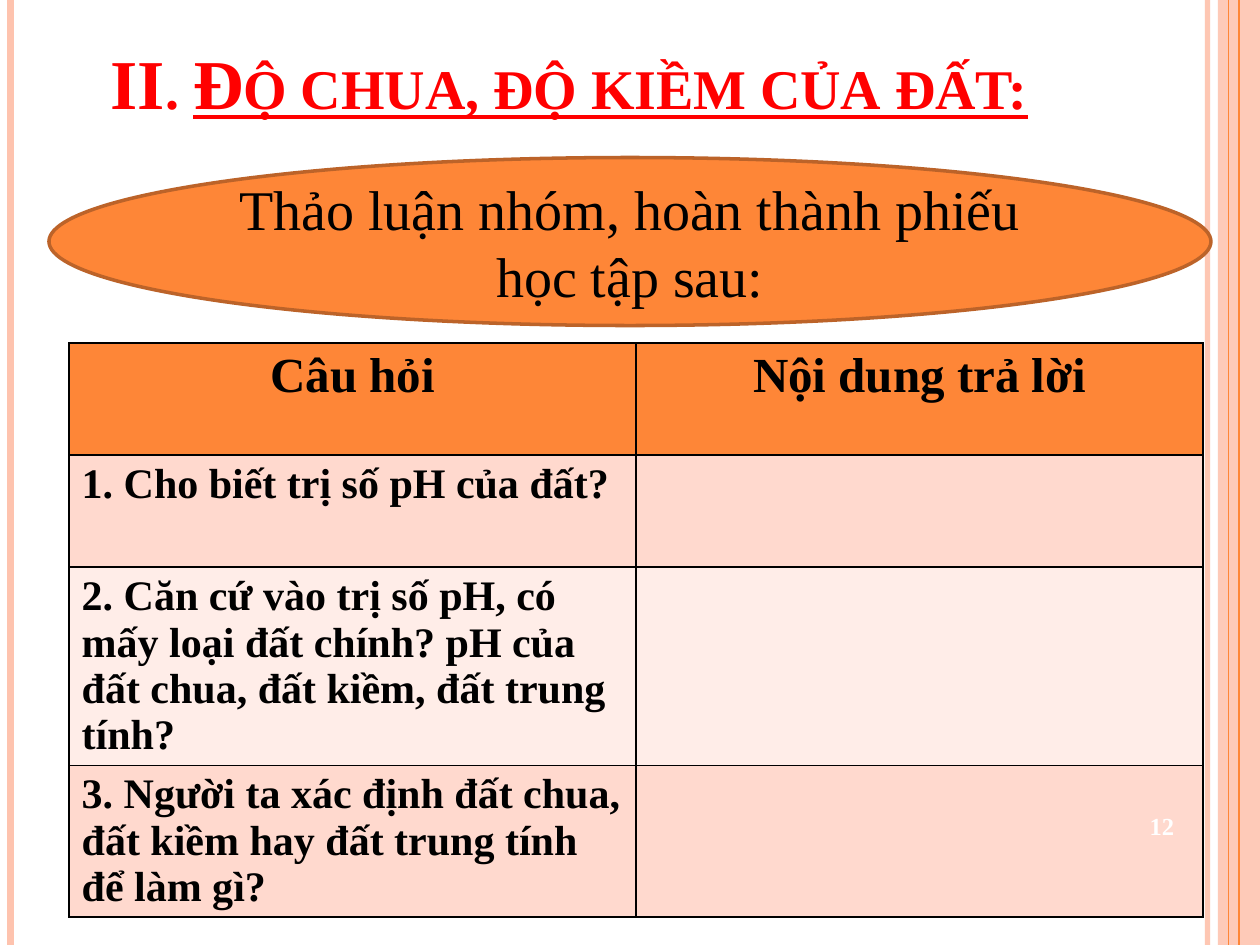
from dataclasses import dataclass

from lxml.etree import SubElement
from pptx import Presentation
from pptx.dml.color import RGBColor as RGB
from pptx.enum.shapes import MSO_CONNECTOR as Connector, MSO_SHAPE as Shape
from pptx.enum.text import MSO_ANCHOR as Anchor, PP_ALIGN as Align
from pptx.oxml.ns import qn
from pptx.util import Pt


@dataclass(frozen=True)
class Theme:
    font: str = "Times New Roman"
    black: RGB = RGB(0, 0, 0)
    white: RGB = RGB(255, 255, 255)
    red: RGB = RGB(255, 0, 0)
    orange: RGB = RGB.from_string("FE8637")
    brown: RGB = RGB.from_string("BC6329")
    peach: RGB = RGB.from_string("FEC3AE")
    band_dark: RGB = RGB.from_string("FFD9CE")
    band_light: RGB = RGB.from_string("FFEDE8")
    title_size: Pt = Pt(40)
    task_size: Pt = Pt(32)
    header_size: Pt = Pt(28)
    body_size: Pt = Pt(24)
    number_size: Pt = Pt(14)


theme = Theme()


def set_font(paragraph, size, color, bold):
    font = paragraph.font
    font.name, font.size, font.bold = theme.font, size, bold
    font.color.rgb = color


def set_opacity(properties, percent):
    color = next(properties.iter(qn("a:srgbClr")))
    SubElement(color, qn("a:alpha"), val=str(percent * 1000))


presentation = Presentation()
presentation.slide_width, presentation.slide_height = Pt(720), Pt(540)
slide = presentation.slides.add_slide(presentation.slide_layouts[5])
shapes = slide.shapes

side_band = shapes.add_shape(Shape.RECTANGLE, Pt(696), Pt(0), Pt(24), Pt(540))
side_band.shadow.inherit = False
side_band.fill.solid()
side_band.fill.fore_color.rgb = theme.peach
side_band.line.fill.background()
set_opacity(side_band.fill._xPr, 87)

for x, color, width, opacity in [
    (690, theme.peach, 3, 93),
    (6, theme.peach, 4.5, 100),
    (708, theme.orange, 1.5, 100),
    (702, theme.orange, 0.75, 100),
]:
    rule = shapes.add_connector(Connector.STRAIGHT, Pt(x), Pt(0), Pt(x), Pt(540))
    rule.line.color.rgb = color
    rule.line.width = Pt(width)
    if opacity < 100:
        set_opacity(rule.line.fill._xPr, opacity)
    SubElement(rule._element.spPr, qn("a:effectLst"))

title = shapes.title
title.left, title.top, title.width, title.height = Pt(56), Pt(0), Pt(588), Pt(74)
title.text_frame.vertical_anchor = Anchor.BOTTOM
title.text_frame.word_wrap = True
heading = title.text_frame.paragraphs[0]
heading.alignment = Align.LEFT
set_font(heading, theme.title_size, theme.red, True)
for text, underline in [("II. ", False), ("Độ chua, độ kiềm của đất:", True)]:
    run = heading.add_run()
    run.text = text
    run.font.underline = underline
    run.font._element.set("cap", "small")

rows = [
    ("Câu hỏi", "Nội dung trả lời"),
    ("1. Cho biết trị số pH của đất?", ""),
    ("2. Căn cứ vào trị số pH, có mấy loại đất chính? "
     "pH của đất chua, đất kiềm, đất trung tính?", ""),
    ("3. Người ta xác định đất chua, đất kiềm hay đất trung tính để làm gì?", ""),
]
row_heights = [64, 64, 103, 72]
row_fills = [theme.orange, theme.band_dark, theme.band_light, theme.band_dark]
table = shapes.add_table(
    len(rows), 2, Pt(39.5), Pt(196), Pt(648), Pt(sum(row_heights))
).table
for column in table.columns:
    column.width = Pt(324)
for row_index, texts in enumerate(rows):
    table.rows[row_index].height = Pt(row_heights[row_index])
    is_header = row_index == 0
    for column_index, text in enumerate(texts):
        cell = table.cell(row_index, column_index)
        cell.text = text
        paragraph = cell.text_frame.paragraphs[0]
        paragraph.alignment = Align.CENTER if is_header else Align.LEFT
        size = theme.header_size if is_header else theme.body_size
        set_font(paragraph, size, theme.black, True)
        cell_properties = cell._tc.get_or_add_tcPr()
        for side in ("a:lnL", "a:lnR", "a:lnT", "a:lnB"):
            border = SubElement(cell_properties, qn(side), w=str(Pt(1)))
            border_fill = SubElement(border, qn("a:solidFill"))
            SubElement(border_fill, qn("a:srgbClr"), val=str(theme.black))
        cell.fill.solid()
        cell.fill.fore_color.rgb = row_fills[row_index]

task = shapes.add_shape(Shape.OVAL, Pt(28), Pt(90), Pt(664), Pt(96))
task.shadow.inherit = False
task.fill.solid()
task.fill.fore_color.rgb = theme.orange
task.line.color.rgb = theme.brown
task.line.width = Pt(2)
task.text_frame.word_wrap = True
task.text_frame.vertical_anchor = Anchor.MIDDLE
paragraph = task.text_frame.paragraphs[0]
paragraph.text = "Thảo luận nhóm, hoàn thành phiếu học tập sau:"
paragraph.alignment = Align.CENTER
set_font(paragraph, theme.task_size, theme.black, False)

page_number = shapes.add_textbox(Pt(642), Pt(450), Pt(44), Pt(44))
page_number.text_frame.word_wrap = True
page_number.text_frame.vertical_anchor = Anchor.MIDDLE
paragraph = page_number.text_frame.paragraphs[0]
paragraph.text = "12"
paragraph.alignment = Align.CENTER
set_font(paragraph, theme.number_size, theme.white, True)

presentation.save("out.pptx")
